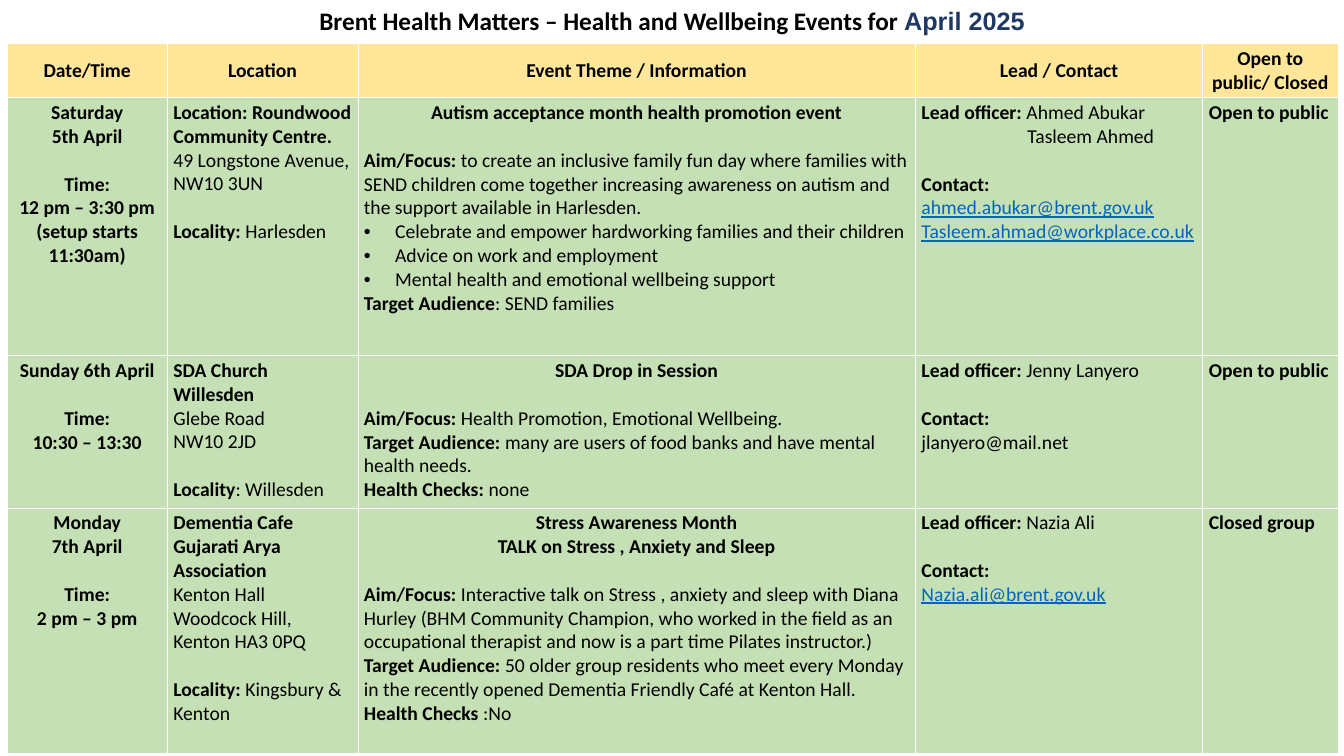
from dataclasses import dataclass

import pptx
import pptx.dml.color
import pptx.enum.text
import pptx.oxml
import pptx.oxml.ns
import pptx.util
from pptx.util import Inches

COLOURS = {
    "header": "FFE699",
    "body": "C5E0B4",
    "border": "FFFFFF",
    "text": "000000",
    "month": "203864",
    "link": "0563C1",
}
COLUMN_WIDTHS = [1.59, 1.89, 5.53, 2.85, 1.34]
ROW_HEIGHTS = [0.54, 2.56, 1.51, 2.43]
CENTRED_COLUMN = 0
BLANK_LINE = 17.1
ALIGN = pptx.enum.text.PP_ALIGN
ANCHOR = pptx.enum.text.MSO_ANCHOR


@dataclass
class Line:
    bold: str = ""
    plain: str = ""
    centred: bool = False
    gap: bool = False
    bullet: bool = False
    link: bool = False
    indent: float = 0


HEADINGS = [
    "Date/Time",
    "Location",
    "Event Theme / Information",
    "Lead / Contact",
    "Open to public/ Closed",
]
EVENTS = [
    [
        [
            Line("Saturday"),
            Line("5th April"),
            Line("Time:", gap=True),
            Line("12 pm – 3:30 pm"),
            Line("(setup starts 11:30am)"),
        ],
        [
            Line("Location: Roundwood Community Centre."),
            Line(plain="49 Longstone Avenue, NW10 3UN"),
            Line("Locality: ", "Harlesden", gap=True),
        ],
        [
            Line("Autism acceptance month health promotion event", centred=True),
            Line("Aim/Focus: ", "to create an inclusive family fun day where families with "
                 "SEND children come together increasing awareness on autism and the "
                 "support available in Harlesden.", gap=True),
            Line(plain="Celebrate and empower hardworking families and their children", bullet=True),
            Line(plain="Advice on work and employment", bullet=True),
            Line(plain="Mental health and emotional wellbeing support", bullet=True),
            Line("Target Audience", ": SEND families"),
        ],
        [
            Line("Lead officer: ", "Ahmed Abukar"),
            Line(plain="Tasleem Ahmed", indent=1.05),
            Line("Contact:", gap=True),
            Line(plain="ahmed.abukar@brent.gov.uk", link=True),
            Line(plain="Tasleem.ahmad@workplace.co.uk", link=True),
        ],
        [Line("Open to public")],
    ],
    [
        [
            Line("Sunday 6th April"),
            Line("Time:", gap=True),
            Line("10:30 – 13:30"),
        ],
        [
            Line("SDA Church Willesden"),
            Line(plain="Glebe Road"),
            Line(plain="NW10 2JD"),
            Line("Locality", ": Willesden", gap=True),
        ],
        [
            Line("SDA Drop in Session", centred=True),
            Line("Aim/Focus: ", "Health Promotion, Emotional Wellbeing.", gap=True),
            Line("Target Audience: ", "many are users of food banks and have mental health needs."),
            Line("Health Checks: ", "none"),
        ],
        [
            Line("Lead officer: ", "Jenny Lanyero"),
            Line("Contact:", gap=True),
            Line(plain="jlanyero@mail.net"),
        ],
        [Line("Open to public")],
    ],
    [
        [
            Line("Monday"),
            Line("7th April"),
            Line("Time:", gap=True),
            Line("2 pm – 3 pm"),
        ],
        [
            Line("Dementia Cafe"),
            Line("Gujarati Arya Association"),
            Line(plain="Kenton Hall"),
            Line(plain="Woodcock Hill,"),
            Line(plain="Kenton HA3 0PQ"),
            Line("Locality: ", "Kingsbury & Kenton", gap=True),
        ],
        [
            Line("Stress Awareness Month", centred=True),
            Line("TALK on Stress , Anxiety and Sleep", centred=True),
            Line("Aim/Focus: ", "Interactive talk on Stress , anxiety and sleep with Diana "
                 "Hurley (BHM Community Champion, who worked in the field as an occupational "
                 "therapist and now is a part time Pilates instructor.)", gap=True),
            Line("Target Audience: ", "50 older group residents who meet every Monday in the "
                 "recently opened Dementia Friendly Café at Kenton Hall."),
            Line("Health Checks ", ":No"),
        ],
        [
            Line("Lead officer: ", "Nazia Ali"),
            Line("Contact:", gap=True),
            Line(plain="Nazia.ali@brent.gov.uk", link=True),
        ],
        [Line("Closed group")],
    ],
]


def colour(name):
    return pptx.dml.color.RGBColor.from_string(COLOURS[name])


def add_run(paragraph, text, bold, colour_name="text", size=14, font="Calibri"):
    run = paragraph.add_run()
    run.text = text
    run.font.size = pptx.util.Pt(size)
    run.font.name = font
    run.font.bold = bold
    run.font.color.rgb = colour(colour_name)
    return run


def indent_paragraph(paragraph, left, first=0, bullet=False):
    properties = paragraph._p.get_or_add_pPr()
    properties.set("marL", str(Inches(left)))
    properties.set("indent", str(Inches(first)))
    if bullet:
        namespace = pptx.oxml.ns.nsdecls("a")
        properties.append(pptx.oxml.parse_xml(f'<a:buFont {namespace} typeface="Arial"/>'))
        properties.append(pptx.oxml.parse_xml(f'<a:buChar {namespace} char="•"/>'))


def add_line(paragraph, line, centred):
    paragraph.alignment = ALIGN.CENTER if centred else ALIGN.LEFT
    if line.gap:
        paragraph.space_before = pptx.util.Pt(BLANK_LINE)
    if line.bullet:
        indent_paragraph(paragraph, 0.31, -0.31, bullet=True)
    elif line.indent:
        indent_paragraph(paragraph, line.indent)
    if line.bold:
        add_run(paragraph, line.bold, True)
    if line.plain:
        run = add_run(paragraph, line.plain, False, "link" if line.link else "text")
        run.font.underline = line.link


def style_cell(cell, fill, anchor):
    cell.margin_left = cell.margin_right = Inches(0.06)
    cell.margin_top = cell.margin_bottom = Inches(0.03)
    cell.vertical_anchor = anchor
    cell.fill.solid()
    cell.fill.fore_color.rgb = colour(fill)
    for position, side in enumerate("LRTB"):
        border = pptx.oxml.parse_xml(
            f'<a:ln{side} {pptx.oxml.ns.nsdecls("a")} w="6350"><a:solidFill>'
            f'<a:srgbClr val="{COLOURS["border"]}"/></a:solidFill></a:ln{side}>')
        cell._tc.get_or_add_tcPr().insert(position, border)


def fill_cell(cell, lines, centred):
    frame = cell.text_frame
    for number, line in enumerate(lines):
        paragraph = frame.add_paragraph() if number else frame.paragraphs[0]
        add_line(paragraph, line, centred or line.centred)


def add_title(slide):
    title = slide.shapes.title
    title.left, title.top, title.width, title.height = (
        Inches(0), Inches(0), Inches(13.33), Inches(0.61))
    frame = title.text_frame
    frame.auto_size = pptx.enum.text.MSO_AUTO_SIZE.NONE
    frame.vertical_anchor = ANCHOR.TOP
    paragraph = frame.paragraphs[0]
    paragraph.alignment = ALIGN.CENTER
    add_run(paragraph, "Brent Health Matters – Health and Wellbeing Events for ", True, size=18)
    add_run(paragraph, "April 2025", True, "month", 18, "Arial")


def add_events_table(slide):
    rows = [[[Line(heading)] for heading in HEADINGS]] + EVENTS
    table = slide.shapes.add_table(
        len(rows), len(HEADINGS), Inches(0.07), Inches(0.43),
        Inches(sum(COLUMN_WIDTHS)), Inches(sum(ROW_HEIGHTS))).table
    table.horz_banding = False
    for column, width in zip(table.columns, COLUMN_WIDTHS):
        column.width = Inches(width)
    for row_number, (row, height) in enumerate(zip(rows, ROW_HEIGHTS)):
        table.rows[row_number].height = Inches(height)
        header = row_number == 0
        for column_number, lines in enumerate(row):
            cell = table.cell(row_number, column_number)
            style_cell(cell, "header" if header else "body", ANCHOR.MIDDLE if header else ANCHOR.TOP)
            fill_cell(cell, lines, header or column_number == CENTRED_COLUMN)


def main():
    presentation = pptx.Presentation()
    presentation.slide_width = Inches(13.33)
    presentation.slide_height = Inches(7.5)
    slide = presentation.slides.add_slide(presentation.slide_layouts[5])
    add_title(slide)
    add_events_table(slide)
    presentation.save("out.pptx")


if __name__ == "__main__":
    main()
